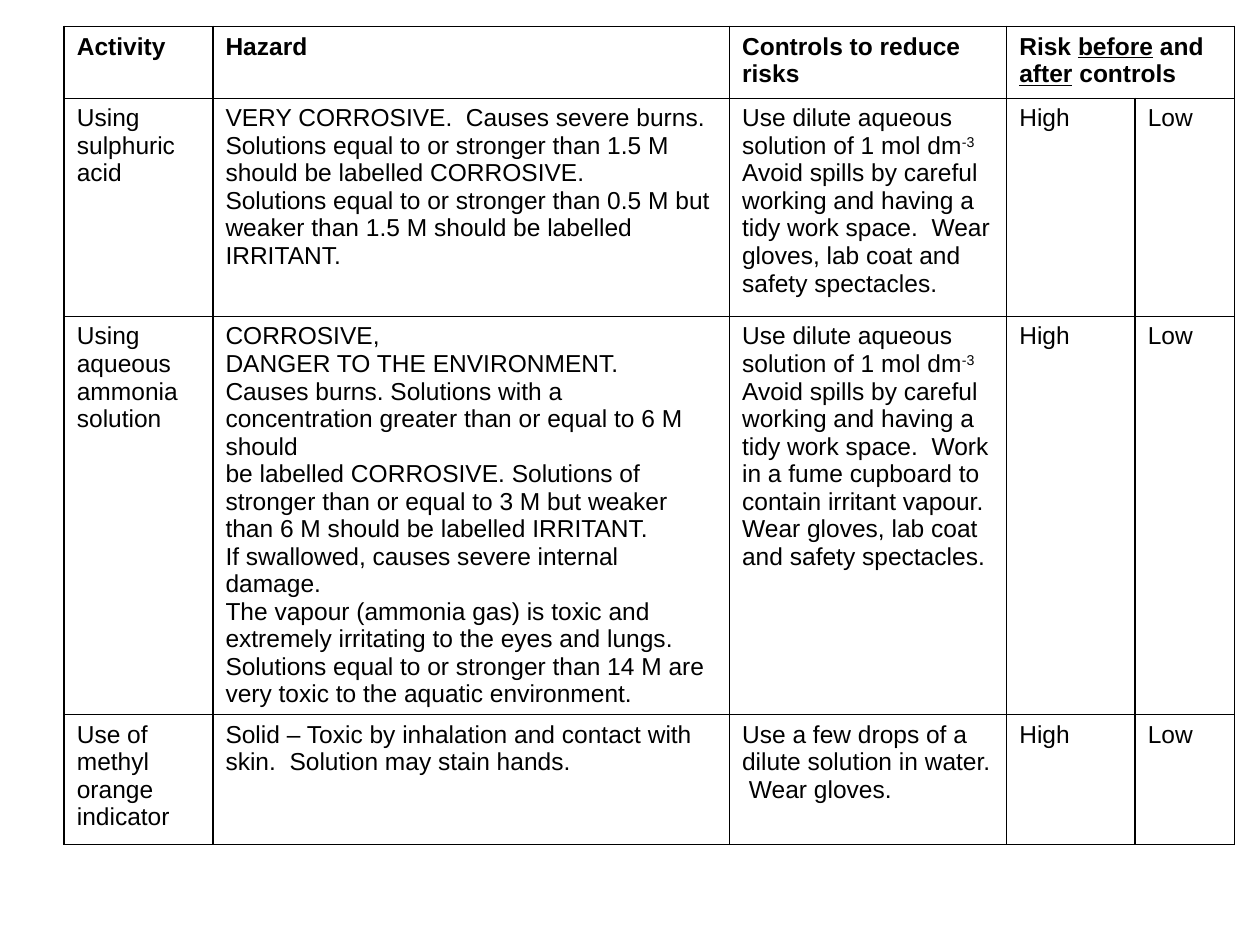
import pptx
import pptx.dml.color
import pptx.enum.text
import pptx.oxml
import pptx.oxml.ns
import pptx.util

BLACK, WHITE = "000000", "FFFFFF"
SLIDE_WIDTH, SLIDE_HEIGHT = pptx.util.Inches(10), pptx.util.Inches(7.5)
COLUMN_WEIGHTS = [1.18, 4.1, 2.2, 1.02, 0.79]
ROW_WEIGHTS = [0.57, 1.73, 3.13, 1.03]
CELL_FORMAT = {
    "margin_left": pptx.util.Inches(0.1),
    "margin_right": pptx.util.Inches(0.1),
    "margin_top": pptx.util.Inches(0.05),
    "margin_bottom": pptx.util.Inches(0.05),
    "vertical_anchor": pptx.enum.text.MSO_ANCHOR.TOP,
}
FONT_FORMAT = {"name": "Arial", "size": pptx.util.Pt(14)}
PLAIN, UNDERLINED, SUPERSCRIPT = "plain", "underlined", "superscript"


def colour(value):
    """Return the colour for a hex string."""
    return pptx.dml.color.RGBColor.from_string(value)


def apply_format(target, values):
    """Set each named attribute of an object."""
    for name, value in values.items():
        setattr(target, name, value)


def dilute_solution(precautions):
    """Return the control text for a dilute solution as one paragraph of runs."""
    return [[
        ("Use dilute aqueous solution of 1 mol dm", PLAIN),
        ("-3", SUPERSCRIPT),
        ("  Avoid spills by careful working and having a tidy work space.  " + precautions, PLAIN),
    ]]


HEADINGS = [
    ["Activity"],
    ["Hazard"],
    ["Controls to reduce risks"],
    [[("Risk ", PLAIN), ("before", UNDERLINED), (" and ", PLAIN),
      ("after", UNDERLINED), (" controls", PLAIN)]],
]
ASSESSMENTS = [
    (
        ["Using sulphuric acid"],
        ["VERY CORROSIVE.  Causes severe burns. Solutions equal to or stronger than 1.5 M "
         "should be labelled CORROSIVE.",
         "Solutions equal to or stronger than 0.5 M but weaker than 1.5 M should be labelled "
         "IRRITANT."],
        dilute_solution("Wear gloves, lab coat and safety spectacles."),
    ),
    (
        ["Using aqueous ammonia solution"],
        ["CORROSIVE,",
         "DANGER TO THE ENVIRONMENT.",
         "Causes burns. Solutions with a concentration greater than or equal to 6 M should",
         "be labelled CORROSIVE. Solutions of stronger than or equal to 3 M but weaker than "
         "6 M should be labelled IRRITANT.",
         "If swallowed, causes severe internal damage.",
         "The vapour (ammonia gas) is toxic and extremely irritating to the eyes and lungs.",
         "Solutions equal to or stronger than 14 M are very toxic to the aquatic environment."],
        dilute_solution("Work in a fume cupboard to contain irritant vapour.  "
                        "Wear gloves, lab coat and safety spectacles."),
    ),
    (
        ["Use of methyl orange indicator"],
        ["Solid – Toxic by inhalation and contact with skin.  Solution may stain hands."],
        ["Use a few drops of a dilute solution in water.  Wear gloves."],
    ),
]
RISK_LEVELS = (["High"], ["Low"])


def draw_borders(cell):
    """Give a cell a thin black line on every side."""
    properties = cell._tc.get_or_add_tcPr()
    for index, side in enumerate(("lnL", "lnR", "lnT", "lnB")):
        properties.insert(index, pptx.oxml.parse_xml(
            f'<a:{side} {pptx.oxml.ns.nsdecls("a")} w="{pptx.util.Pt(1)}">'
            f'<a:solidFill><a:srgbClr val="{BLACK}"/></a:solidFill></a:{side}>'))


def add_run(paragraph, text, style, bold):
    """Append one formatted run to a paragraph."""
    run = paragraph.add_run()
    run.text = text
    apply_format(run.font, {**FONT_FORMAT, "bold": bold, "underline": style == UNDERLINED})
    run.font.color.rgb = colour(BLACK)
    if style == SUPERSCRIPT:
        run._r.get_or_add_rPr().set("baseline", "30000")


def fill_cell(cell, paragraphs, bold):
    """Write paragraphs, each a string or a list of runs, into a cell."""
    for index, content in enumerate(paragraphs):
        frame = cell.text_frame
        paragraph = frame.add_paragraph() if index else frame.paragraphs[0]
        runs = [(content, PLAIN)] if isinstance(content, str) else content
        for text, style in runs:
            add_run(paragraph, text, style, bold)


def share_out(tracks, attribute, length, weights):
    """Divide a length among table columns or rows by weight."""
    for track, weight in zip(tracks, weights):
        setattr(track, attribute, round(length * weight / sum(weights)))


def add_risk_table(slide, left, top, width, height):
    """Place the risk assessment table in the given box."""
    rows = [HEADINGS] + [[*assessment, *RISK_LEVELS] for assessment in ASSESSMENTS]
    table = slide.shapes.add_table(
        len(rows), len(COLUMN_WEIGHTS), left, top, width, height).table
    apply_format(table, {"first_row": False, "horz_banding": False})
    share_out(table.columns, "width", width, COLUMN_WEIGHTS)
    share_out(table.rows, "height", height, ROW_WEIGHTS)
    table.cell(0, 3).merge(table.cell(0, 4))
    for cell in table.iter_cells():
        apply_format(cell, CELL_FORMAT)
        cell.fill.solid()
        cell.fill.fore_color.rgb = colour(WHITE)
        draw_borders(cell)
    for row_index, row in enumerate(rows):
        for column_index, paragraphs in enumerate(row):
            fill_cell(table.cell(row_index, column_index), paragraphs, bold=row_index == 0)


def main():
    """Build and save the presentation."""
    presentation = pptx.Presentation()
    apply_format(presentation, {"slide_width": SLIDE_WIDTH, "slide_height": SLIDE_HEIGHT})
    slide = presentation.slides.add_slide(presentation.slide_layouts[6])
    add_risk_table(
        slide,
        left=round(SLIDE_WIDTH * 0.051),
        top=round(SLIDE_HEIGHT * 0.028),
        width=round(SLIDE_WIDTH * 0.929),
        height=round(SLIDE_HEIGHT * 0.862),
    )
    presentation.save("out.pptx")


if __name__ == "__main__":
    main()
